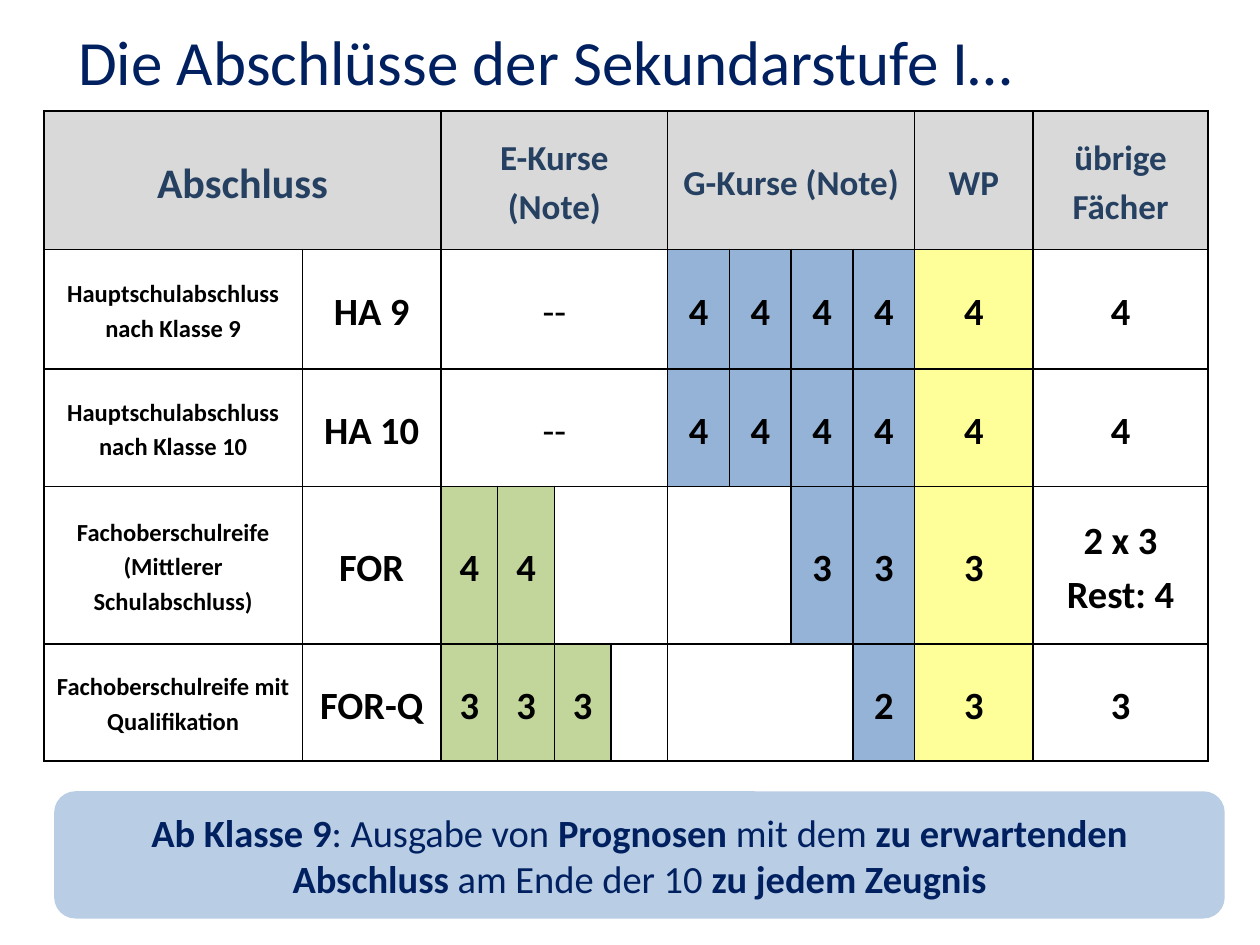
import pptx
import pptx.util
import pptx.dml.color
import pptx.enum.shapes
import pptx.enum.text
import pptx.oxml
import pptx.oxml.ns

Inches = pptx.util.Inches
ALIGN = pptx.enum.text.PP_ALIGN
MIDDLE = pptx.enum.text.MSO_ANCHOR.MIDDLE


def rgb(value):
    return pptx.dml.color.RGBColor.from_string(value)


def write(tf, text, size=22, color="000000", bold=False, align=ALIGN.CENTER, spacing=None):
    tf.word_wrap = True
    for i, line in enumerate(text.split("\n")):
        p = tf.add_paragraph() if i else tf.paragraphs[0]
        p.alignment = align
        p.line_spacing = spacing
        for j, part in enumerate(line.split("*")):
            if part:
                r = p.add_run()
                r.text = part
                r.font.name = "Calibri"
                r.font.size = pptx.util.Pt(size)
                r.font.bold = bold or j % 2 == 1
                r.font.color.rgb = rgb(color)


prs = pptx.Presentation()
prs.slide_width, prs.slide_height = Inches(10), Inches(7.5)
W, H = prs.slide_width, prs.slide_height
s = prs.slides.add_slide(prs.slide_layouts[5])

title = s.shapes.title
title.left, title.top, title.width, title.height = int(W * 0.052), Inches(0.13), int(W * 0.94), Inches(0.71)
title.text_frame.vertical_anchor = pptx.enum.text.MSO_ANCHOR.TOP
write(title.text_frame, "Die Abschlüsse der Sekundarstufe I…", size=36, color="002060", align=ALIGN.LEFT)

GREY, BLUE, YELLOW, GREEN = "D9D9D9", "95B3D7", "FFFF99", "C2D69B"
widths = [2.05, 1.1] + [0.45] * 4 + [0.49] * 4 + [0.94, 1.39]
heights = [1.1, 0.95, 0.93, 1.25, 0.93]
header = [("Abschluss", 2, GREY), ("E-Kurse (Note)", 4, GREY), ("G-Kurse (Note)", 4, GREY),
          ("WP", 1, GREY), ("übrige Fächer", 1, GREY)]
basic = [("--", 4, None)] + [("4", 1, BLUE)] * 4 + [("4", 1, YELLOW), ("4", 1, None)]
rows = [
    header,
    [("Hauptschulabschluss nach Klasse 9", 1, None), ("HA 9", 1, None)] + basic,
    [("Hauptschulabschluss nach Klasse 10", 1, None), ("HA 10", 1, None)] + basic,
    [("Fachoberschulreife\n(Mittlerer Schulabschluss)", 1, None), ("FOR", 1, None)]
    + [("4", 1, GREEN)] * 2 + [("", 2, None)] * 2 + [("3", 1, BLUE)] * 2
    + [("3", 1, YELLOW), ("2 x 3\nRest: 4", 1, None)],
    [("Fachoberschulreife mit Qualifikation", 1, None), ("FOR-Q", 1, None)]
    + [("3", 1, GREEN)] * 3 + [("", 1, None), ("", 3, None), ("2", 1, BLUE)]
    + [("3", 1, YELLOW), ("3", 1, None)],
]

frame = s.shapes.add_table(len(heights), len(widths), int(W * 0.035), Inches(0.88),
                           Inches(sum(widths)), Inches(sum(heights)))
table = frame.table
table.first_row = table.horz_banding = False
for col, width in zip(table.columns, widths):
    col.width = Inches(width)
for row, height in zip(table.rows, heights):
    row.height = Inches(height)

for cell in table.iter_cells():
    cell.fill.background()
    cell.vertical_anchor = MIDDLE
    cell.margin_left = cell.margin_right = Inches(0.07)
    cell.margin_top = cell.margin_bottom = 0
    for i, side in enumerate("LRTB"):
        line = pptx.oxml.parse_xml(
            f'<a:ln{side} {pptx.oxml.ns.nsdecls("a")} w="12700"><a:solidFill>'
            f'<a:srgbClr val="000000"/></a:solidFill></a:ln{side}>')
        cell._tc.get_or_add_tcPr().insert(i, line)

for y, row in enumerate(rows):
    x = 0
    for text, span, fill in row:
        cell = table.cell(y, x)
        if span > 1:
            cell.merge(table.cell(y, x + span - 1))
        if fill:
            cell.fill.solid()
            cell.fill.fore_color.rgb = rgb(fill)
        if y == 0:
            size = 24 if x == 0 else 20
        else:
            size = 14 if x == 0 else 22
        write(cell.text_frame, text, size=size, color="000000" if y else "254061",
              bold=text != "--", spacing=1.15)
        x += span

sp = s.shapes.add_shape(pptx.enum.shapes.MSO_SHAPE.ROUNDED_RECTANGLE,
                        int(W * 0.043), Inches(6.28), int(W * 0.929), Inches(1.01))
sp.shadow.inherit = False
sp.fill.solid()
sp.fill.fore_color.rgb = rgb("B9CDE5")
sp.line.fill.background()
sp.text_frame.vertical_anchor = MIDDLE
write(sp.text_frame, "*Ab Klasse 9*: Ausgabe von *Prognosen* mit dem *zu erwartenden Abschluss *"
      "am Ende der 10 *zu jedem Zeugnis*", color="002060")

prs.save("out.pptx")
